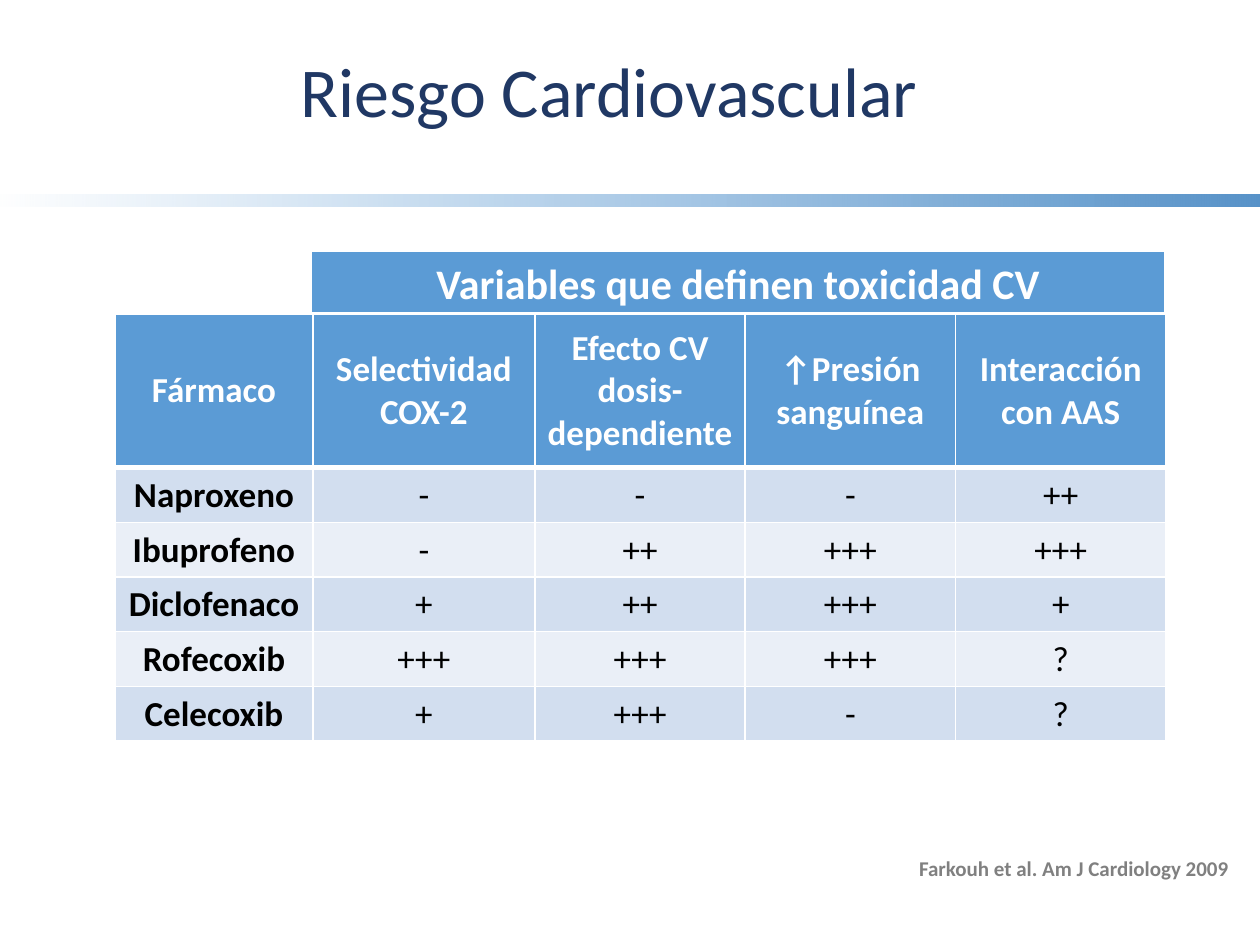
"""Build the cardiovascular risk slide with its drug comparison table."""
from dataclasses import dataclass
from typing import Any

from lxml.etree import SubElement
from pptx import Presentation
from pptx.dml.color import RGBColor
from pptx.enum.shapes import MSO_SHAPE as Preset
from pptx.enum.text import MSO_ANCHOR as Anchor, PP_ALIGN as Align
from pptx.oxml import parse_xml
from pptx.oxml.ns import nsdecls, qn
from pptx.util import Pt

BLUE, WHITE, BLACK = "5B9BD5", "FFFFFF", "000000"
BANDS = ("D2DEEF", "EAEFF7")
COLUMN_WIDTHS = (113, 126.9, 120.2, 120.2, 120.2)
HEADER_HEIGHT, ROW_HEIGHT = 87.8, 31.2
HEADERS = ("Fármaco", "Selectividad COX-2", "Efecto CV dosis-dependiente",
           "↑Presión sanguínea", "Interacción con AAS")
DRUGS = (
    ("Naproxeno", "-", "-", "-", "++"),
    ("Ibuprofeno", "-", "++", "+++", "+++"),
    ("Diclofenaco", "+", "++", "+++", "+"),
    ("Rofecoxib", "+++", "+++", "+++", "?"),
    ("Celecoxib", "+", "+++", "-", "?"),
)


@dataclass(frozen=True)
class Box:
    left: float
    top: float
    width: float
    height: float

    def lengths(self) -> tuple:
        return tuple(Pt(value) for value in (self.left, self.top, self.width, self.height))


@dataclass(frozen=True)
class TextStyle:
    size: float
    colour: str
    bold: bool = False
    align: Any = Align.CENTER
    anchor: Any = Anchor.MIDDLE
    line_spacing: float = 1.0


@dataclass(frozen=True)
class Label:
    text: str
    box: Box
    style: TextStyle


LABELS = (
    Label("Riesgo Cardiovascular", Box(118.8, 2.2, 458.6, 104.4),
          TextStyle(40, "203864", line_spacing=0.9)),
    Label("Farkouh et al. Am J Cardiology 2009", Box(201.6, 485.3, 507.6, 21.6),
          TextStyle(12, "808080", True, Align.RIGHT, Anchor.TOP)),
)
BANNER = Label("Variables que definen toxicidad CV", Box(177.4, 143.3, 488.8, 36),
               TextStyle(24, WHITE, True))
HEADER_STYLE = TextStyle(20, WHITE, True)
DRUG_STYLE = TextStyle(20, BLACK, True, anchor=Anchor.TOP)
VALUE_STYLE = TextStyle(20, BLACK, anchor=Anchor.TOP)


def colour(value: str) -> RGBColor:
    return RGBColor.from_string(value)


def write_text(frame: Any, text: str, style: TextStyle) -> None:
    frame.text = text
    paragraph = frame.paragraphs[0]
    paragraph.alignment = style.align
    paragraph.line_spacing = style.line_spacing
    font = paragraph.runs[0].font
    settings = {"name": "Calibri", "size": Pt(style.size), "bold": style.bold}
    for name, value in settings.items():
        setattr(font, name, value)
    font.color.rgb = colour(style.colour)


def fill_frame(shape: Any, label: Label) -> None:
    frame = shape.text_frame
    frame.word_wrap = True
    frame.vertical_anchor = label.style.anchor
    write_text(frame, label.text, label.style)


def draw_label(slide: Any, label: Label) -> None:
    fill_frame(slide.shapes.add_textbox(*label.box.lengths()), label)


def draw_rectangle(slide: Any, box: Box) -> Any:
    shape = slide.shapes.add_shape(Preset.RECTANGLE, *box.lengths())
    shape.shadow.inherit = False
    return shape


def draw_stripe(slide: Any) -> None:
    stripe = draw_rectangle(slide, Box(-4.3, 111.2, 734.4, 6.8))
    stripe.line.fill.background()
    stripe.fill.gradient()
    stripe.fill.gradient_angle = 0
    for stop, value in zip(stripe.fill.gradient_stops, (BLUE, "5591C8")):
        stop.color.rgb = colour(value)
    first_colour = stripe.element.xpath(".//a:gs/a:srgbClr")[0]
    SubElement(first_colour, qn("a:alpha"), val="0")


def draw_banner(slide: Any, banner: Label) -> None:
    shape = draw_rectangle(slide, banner.box)
    shape.fill.solid()
    shape.fill.fore_color.rgb = colour(BLUE)
    shape.line.color.rgb = colour(WHITE)
    shape.line.width = Pt(2)
    fill_frame(shape, banner)


def style_cell(cell: Any, text: str, style: TextStyle, fill: str, edges: dict[str, float]) -> None:
    properties = cell._tc.get_or_add_tcPr()
    for edge, width in edges.items():
        properties.append(parse_xml(
            f'<a:{edge} {nsdecls("a")} w="{Pt(width)}"><a:solidFill>'
            f'<a:srgbClr val="{WHITE}"/></a:solidFill></a:{edge}>'))
    cell.fill.solid()
    cell.fill.fore_color.rgb = colour(fill)
    cell.vertical_anchor = style.anchor
    write_text(cell.text_frame, text, style)


def draw_table(slide: Any) -> None:
    height = HEADER_HEIGHT + ROW_HEIGHT * len(DRUGS)
    box = Box(65.8, 179.5, sum(COLUMN_WIDTHS), height)
    table = slide.shapes.add_table(len(DRUGS) + 1, len(HEADERS), *box.lengths()).table
    for column, width in zip(table.columns, COLUMN_WIDTHS):
        column.width = Pt(width)
    for index, texts in enumerate((HEADERS, *DRUGS)):
        is_header = index == 0
        table.rows[index].height = Pt(HEADER_HEIGHT if is_header else ROW_HEIGHT)
        fill = BLUE if is_header else BANDS[(index - 1) % 2]
        edges = {"lnL": 1, "lnR": 1, "lnT": 3 if index == 1 else 1, "lnB": 3 if is_header else 1}
        for position, text in enumerate(texts):
            body_style = DRUG_STYLE if position == 0 else VALUE_STYLE
            style = HEADER_STYLE if is_header else body_style
            style_cell(table.cell(index, position), text, style, fill, edges)


def main() -> None:
    presentation = Presentation()
    presentation.slide_width, presentation.slide_height = Pt(720), Pt(540)
    slide = presentation.slides.add_slide(presentation.slide_layouts[6])
    draw_stripe(slide)
    for label in LABELS:
        draw_label(slide, label)
    draw_table(slide)
    draw_banner(slide, BANNER)
    presentation.save("out.pptx")


if __name__ == "__main__":
    main()
